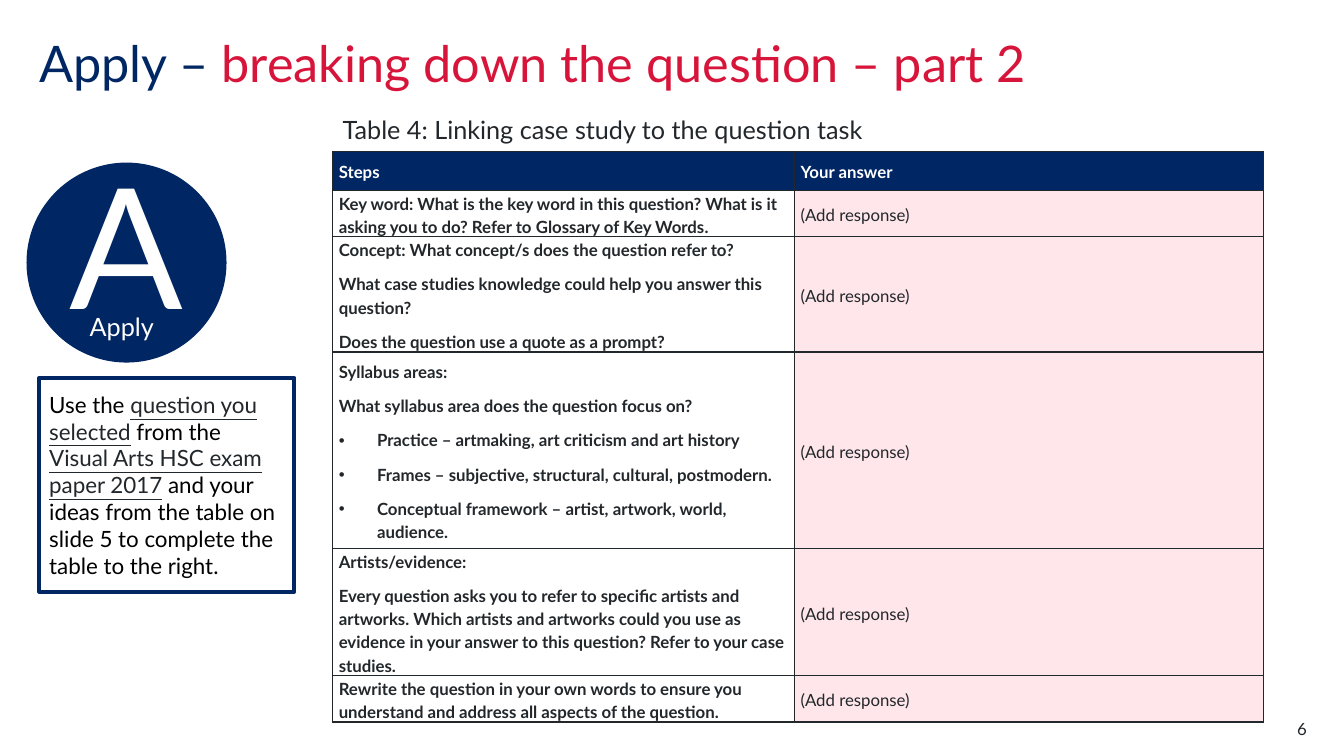
from lxml import etree
from pptx import Presentation
from pptx.dml.color import RGBColor
from pptx.enum.shapes import MSO_SHAPE as Shape
from pptx.enum.text import MSO_ANCHOR as Anchor, PP_ALIGN as Align
from pptx.oxml.ns import qn
from pptx.util import Inches, Pt

NAVY, RED, INK, WHITE, BLACK, PINK = "002664", "D7153A", "22272B", "FFFFFF", "000000", "FFE6EA"
BODY = {"size": Pt(12), "name": "Lato", "bold": True}
ANSWER = "(Add response)"
BULLET = "• "

# Each step is a list of paragraphs, and each paragraph a list of (text, underlined) runs
STEPS = [
    [[("Key word: What is the key word in this question? What is it asking you to do? Refer to ", False),
      ("Glossary of Key Words", True), (".", False)]],
    [[("Concept: What concept/s does the question refer to?", False)],
     [("What case studies knowledge could help you answer this question?", False)],
     [("Does the question use a quote as a prompt?", False)]],
    [[("Syllabus areas:", False)],
     [("What syllabus area does the question focus on?", False)],
     [(BULLET + "Practice – artmaking, art criticism and art history", False)],
     [(BULLET + "Frames – subjective, structural, cultural, postmodern.", False)],
     [(BULLET + "Conceptual framework – artist, artwork, world, audience.", False)]],
    [[("Artists/evidence:", False)],
     [("Every question asks you to refer to specific artists and artworks. Which artists and artworks "
       "could you use as evidence in your answer to this question? Refer to your case studies.", False)]],
    [[("Rewrite the question in your own words to ensure you understand and address all aspects "
       "of the question.", False)]],
]
ROW_HEIGHTS = [0.39, 0.44, 1.08, 1.95, 1.19, 0.43]


def color(hex_string):
    return RGBColor.from_string(hex_string)


def inches(box):
    return [Inches(length) for length in box]


def set_margins(target, left, top, right, bottom):
    margins = {"margin_left": left, "margin_top": top, "margin_right": right, "margin_bottom": bottom}
    for name, length in margins.items():
        setattr(target, name, Inches(length))


def add_run(paragraph, text, hex_string, **formats):
    run = paragraph.add_run()
    run.text = text
    for name, value in ({"name": "Lato"} | formats).items():
        setattr(run.font, name, value)
    run.font.color.rgb = color(hex_string)


def add_text(shapes, box, text, hex_string, size, align=Align.LEFT):
    frame = shapes.add_textbox(*inches(box)).text_frame
    frame.word_wrap = True
    set_margins(frame, 0, 0, 0, 0)
    frame.paragraphs[0].alignment = align
    add_run(frame.paragraphs[0], text, hex_string, size=Pt(size))


def add_box(shapes, kind, box, fill, line_width, align=Align.LEFT):
    shape = shapes.add_shape(kind, *inches(box))
    shape.shadow.inherit = False
    shape.fill.solid()
    shape.fill.fore_color.rgb = color(fill)
    if line_width:
        shape.line.color.rgb = color(NAVY)
        shape.line.width = Pt(line_width)
    else:
        shape.line.fill.background()
    frame = shape.text_frame
    frame.word_wrap = True
    frame.vertical_anchor = Anchor.MIDDLE
    frame.paragraphs[0].alignment = align
    return frame


def add_title(slide, box):
    title = slide.shapes.title
    title.left, title.top, title.width, title.height = inches(box)
    frame = title.text_frame
    frame.vertical_anchor = Anchor.TOP
    set_margins(frame, 0, 0, 0, 0)
    paragraph = frame.paragraphs[0]
    paragraph.alignment = Align.LEFT
    paragraph.line_spacing = 0.9
    add_run(paragraph, "Apply – ", NAVY, size=Pt(36))
    add_run(paragraph, "breaking down the question – part 2", RED, size=Pt(36))


def add_badge(slide, box):
    left, top, width, height = box
    shapes = slide.shapes.add_group_shape().shapes
    frame = add_box(shapes, Shape.OVAL, box, NAVY, 1, Align.CENTER)
    frame.margin_bottom = Inches(0.45)
    add_run(frame.paragraphs[0], "A", WHITE, size=Pt(120))
    add_text(shapes, (left + 0.62, top + 1.47, 0.73, 0.48), "Apply", WHITE, 18)


def add_instructions(slide, box):
    paragraph = add_box(slide.shapes, Shape.RECTANGLE, box, WHITE, 3).paragraphs[0]
    runs = [("Use the ", False), ("question you selected", True), (" from the ", False),
            ("Visual Arts HSC exam paper 2017", True),
            (" and your ideas from the table on slide 5 to complete the table to the right.", False)]
    for text, underlined in runs:
        add_run(paragraph, text, INK if underlined else BLACK, size=Pt(16), underline=underlined)


def add_bullet(paragraph):
    properties = paragraph._p.get_or_add_pPr()
    properties.set("marL", str(Inches(0.38)))
    properties.set("indent", str(-Inches(0.38)))
    etree.SubElement(properties, qn("a:buFont")).set("typeface", "Arial")
    etree.SubElement(properties, qn("a:buChar")).set("char", BULLET.strip())


def add_borders(cell):
    properties = cell._tc.get_or_add_tcPr()
    for position, side in enumerate(("lnL", "lnR", "lnT", "lnB")):
        line = etree.Element(qn("a:" + side), w=str(Pt(1)))
        fill = etree.SubElement(line, qn("a:solidFill"))
        etree.SubElement(fill, qn("a:srgbClr")).set("val", INK)
        properties.insert(position, line)


def fill_cell(cell, paragraphs, fill, hex_string, bold=True):
    cell.fill.solid()
    cell.fill.fore_color.rgb = color(fill)
    cell.vertical_anchor = Anchor.MIDDLE
    set_margins(cell, 0.06, 0, 0.06, 0)
    add_borders(cell)
    frame = cell.text_frame
    for index, runs in enumerate(paragraphs):
        paragraph = frame.add_paragraph() if index else frame.paragraphs[0]
        paragraph.line_spacing = 1.15
        paragraph.space_before = Pt(4 if index else 0)
        paragraph.space_after = Pt(4)
        if runs[0][0].startswith(BULLET):
            add_bullet(paragraph)
        for text, underlined in runs:
            formats = BODY | {"bold": bold, "underline": underlined}
            add_run(paragraph, text.removeprefix(BULLET), hex_string, **formats)


def add_steps_table(slide, box):
    left, top, width, height = box
    # Caption
    caption = add_box(slide.shapes, Shape.RECTANGLE, (left, top - 0.42, 5.92, 0.4), WHITE, 0)
    add_run(caption.paragraphs[0], "Table 4: Linking case study to the question task", INK, size=Pt(18))
    # Grid
    table = slide.shapes.add_table(len(STEPS) + 1, 2, *inches(box)).table
    table.horz_banding = False
    for column, column_width in zip(table.columns, (4.58, width - 4.58)):
        column.width = Inches(column_width)
    for row, row_height in zip(table.rows, ROW_HEIGHTS):
        row.height = Inches(row_height)
    # Header and steps
    for column, heading in enumerate(("Steps", "Your answer")):
        fill_cell(table.cell(0, column), [[(heading, False)]], NAVY, WHITE)
    for row, step in enumerate(STEPS, start=1):
        fill_cell(table.cell(row, 0), step, WHITE, INK)
        fill_cell(table.cell(row, 1), [[(ANSWER, False)]], PINK, INK, bold=False)


def main():
    presentation = Presentation()
    presentation.slide_width, presentation.slide_height = inches((13.33, 7.5))
    slide = presentation.slides.add_slide(presentation.slide_layouts[5])
    add_title(slide, (0.39, 0.39, 11.02, 1.1))
    add_badge(slide, (0.27, 1.62, 1.97, 1.97))
    add_instructions(slide, (0.39, 3.75, 2.53, 2.12))
    add_steps_table(slide, (3.3, 1.5, 9.23, sum(ROW_HEIGHTS)))
    # Slide number
    add_text(slide.shapes, (12.17, 7.13, 0.79, 0.2), "6", INK, 12, Align.RIGHT)
    presentation.save("out.pptx")


if __name__ == "__main__":
    main()
